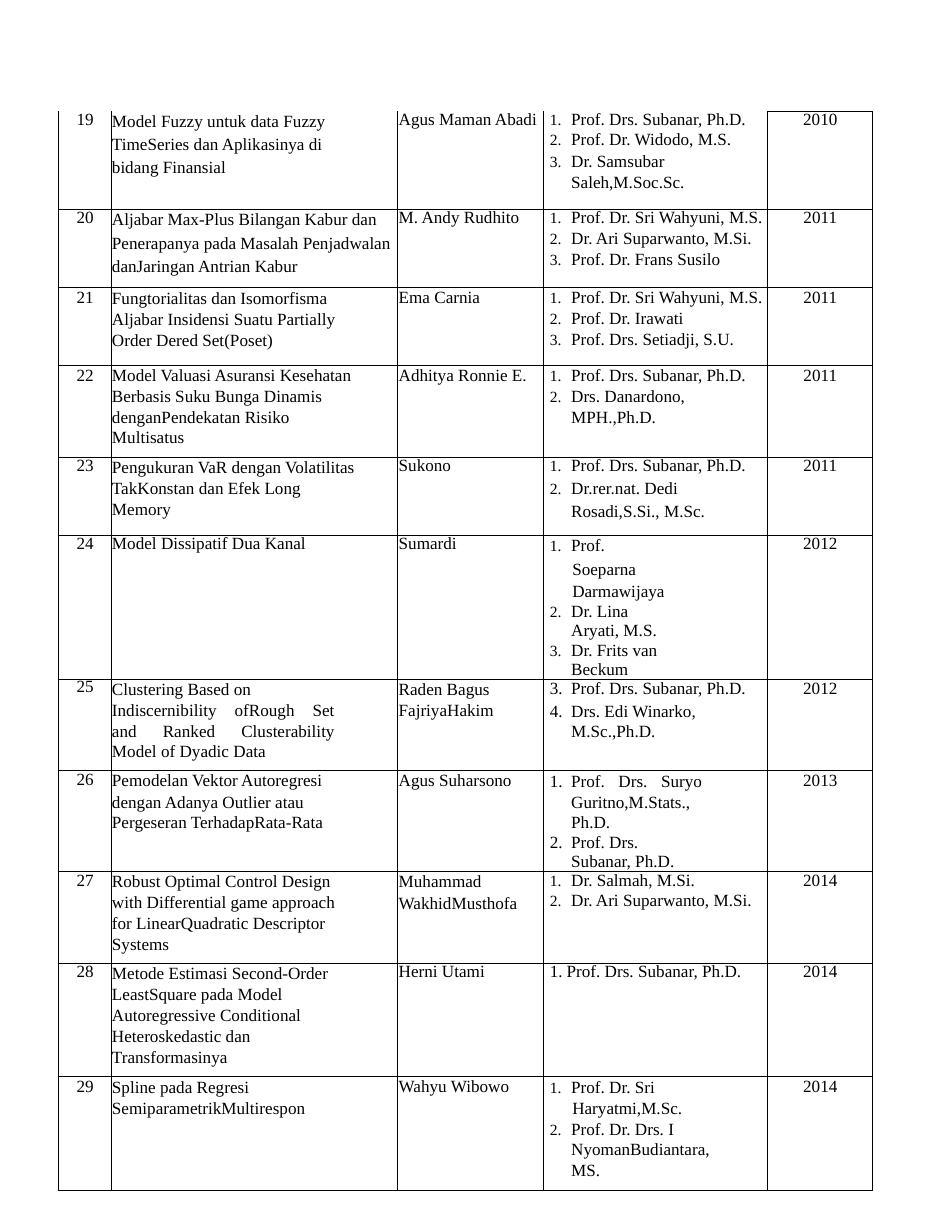
from dataclasses import dataclass

from lxml import etree
from pptx import Presentation
from pptx.dml.color import RGBColor
from pptx.enum.text import PP_ALIGN
from pptx.oxml.ns import qn
from pptx.util import Inches, Pt

LEFT, CENTER, JUSTIFY = PP_ALIGN.LEFT, PP_ALIGN.CENTER, PP_ALIGN.JUSTIFY


@dataclass(frozen=True)
class Theme:
    font: str = "Times New Roman"
    text_size: float = 11
    ink: str = "000000"
    border_width: float = 0.5


@dataclass(frozen=True)
class Line:
    """One paragraph; leading is points above 2, a multiple below."""
    text: str
    leading: float | None = None
    before: float = 0
    right: float = 0
    align: PP_ALIGN = LEFT
    left: float = 0.01
    hanging: float = 0
    start: int = 0
    number_size: int = 100


@dataclass(frozen=True)
class Thesis:
    number: int
    height: float
    leading: float
    title: list[Line]
    author: list[Line]
    supervisors: list[Line]
    year: Line


THEME = Theme()
COLUMN_WIDTHS = [0.47, 2.56, 1.3, 2.0, 0.94]
BORDER_SIDES = ["lnL", "lnR", "lnT", "lnB"]
TITLE_RIGHT = 0.5


def wrapped(text: str, leading: float | None = 1.1, before: float = 0) -> Line:
    return Line(text, leading, before, TITLE_RIGHT)


def item(text: str, leading: float | None = None, before: float = 0, right: float = 0,
         start: int = 1, size: int = 91, align: PP_ALIGN = LEFT,
         left: float = 0.25, hanging: float = 0.19) -> Line:
    return Line(text, leading, before, right, align, left, hanging, start, size)


def year(text: str, leading: float | None = None, before: float = 0) -> Line:
    return Line(text, leading, before, align=CENTER)


THESES = [
    Thesis(19, 0.88, 11.6,
           [Line("Model Fuzzy untuk data Fuzzy", 12.8),
            wrapped("TimeSeries dan Aplikasinya di bidang Finansial", 14.6, 0.7)],
           [Line("Agus Maman Abadi", 11.6)],
           [item("Prof. Drs. Subanar, Ph.D.", 11.6),
            item("Prof. Dr. Widodo, M.S.", before=1.1),
            item("Dr. Samsubar Saleh,M.Soc.Sc.", 1.1, 0.4, 0.5)],
           year("2010", 11.6)),
    Thesis(20, 0.7, 11.4,
           [Line("Aljabar Max-Plus Bilangan Kabur dan", 12.8),
            Line("Penerapanya pada Masalah Penjadwalan danJaringan Antrian Kabur", 14.6, 0.7)],
           [Line("M. Andy Rudhito", 11.4)],
           [item("Prof. Dr. Sri Wahyuni, M.S.", 11.4),
            item("Dr. Ari Suparwanto, M.Si.", before=1.2),
            item("Prof. Dr. Frans Susilo", before=1.1)],
           year("2011", 11.4)),
    Thesis(21, 0.69, 12.7,
           [Line("Fungtorialitas dan Isomorfisma", 12.9),
            wrapped("Aljabar Insidensi Suatu Partially Order Dered Set(Poset)")],
           [Line("Ema Carnia", 12.7)],
           [item("Prof. Dr. Sri Wahyuni, M.S.", 12.7),
            item("Prof. Dr. Irawati", before=1.1),
            item("Prof. Drs. Setiadji, S.U.", before=1.1)],
           year("2011", 12.7)),
    Thesis(22, 0.82, 12.8,
           [Line("Model Valuasi Asuransi Kesehatan", 13),
            wrapped("Berbasis Suku Bunga Dinamis denganPendekatan Risiko Multisatus", 1.09, 0.1)],
           [Line("Adhitya Ronnie E.", 12.8)],
           [item("Prof. Drs. Subanar, Ph.D.", 12.8),
            item("Drs. Danardono, MPH.,Ph.D.", 1.1, 0.1, 0.5)],
           year("2011", 12.8)),
    Thesis(23, 0.7, 11.6,
           [Line("Pengukuran VaR dengan Volatilitas", 12.9),
            wrapped("TakKonstan dan Efek Long Memory")],
           [Line("Sukono", 11.6)],
           [item("Prof. Drs. Subanar, Ph.D.", 11.6),
            item("Dr.rer.nat. Dedi Rosadi,S.Si., M.Sc.", 14.6, 0.5, 0.5)],
           year("2011", 11.6)),
    Thesis(24, 0.97, 11.4,
           [Line("Model Dissipatif Dua Kanal", 11.4)],
           [Line("Sumardi", 11.4)],
           [item("Prof.", 12.9, right=0.9),
            Line("Soeparna Darmawijaya", 14.6, 0.6, 0.9, left=0.26),
            item("Dr. Lina Aryati, M.S.", 12.5, right=0.9, start=2),
            item("Dr. Frits van Beckum", before=0.1, right=0.9, start=2)],
           year("2012", 11.4)),
    Thesis(25, 0.82, 11.4,
           [Line("Clustering Based on", 12.8, align=JUSTIFY),
            Line("Indiscernibility ofRough Set and Ranked Clusterability Model of Dyadic Data",
                 1.09, 0.3, 0.56, JUSTIFY)],
           [Line("Raden Bagus", 12.8), Line("FajriyaHakim", before=1.6)],
           [item("Prof. Drs. Subanar, Ph.D.", before=0.1, start=3, size=100),
            item("Drs. Edi Winarko, M.Sc.,Ph.D.", 13.1, 1.7, 0.5, 3, 100)],
           year("2012", before=0.9)),
    Thesis(26, 0.79, 11.6,
           [Line("Pemodelan Vektor Autoregresi", 12.8),
            wrapped("dengan Adanya Outlier atau Pergeseran TerhadapRata-Rata", 1.1, 0.1)],
           [Line("Agus Suharsono", before=0.8)],
           [item("Prof. Drs. Suryo Guritno,M.Stats., Ph.D.", 13.2, 0.1, 0.58,
                 size=100, align=JUSTIFY),
            item("Prof. Drs. Subanar, Ph.D.", before=0.7, right=0.75, size=100)],
           year("2013", before=0.8)),
    Thesis(27, 0.82, 11.7,
           [Line("Robust Optimal Control Design", 12.9),
            wrapped("with Differential game approach for LinearQuadratic Descriptor Systems")],
           [Line("Muhammad", 12.9), Line("WakhidMusthofa", before=1.3)],
           [item("Dr. Salmah, M.Si.", 11.7),
            item("Dr. Ari Suparwanto, M.Si.", before=0.8)],
           year("2014", 11.7)),
    Thesis(28, 1.01, 11.6,
           [Line("Metode Estimasi Second-Order", 12.8),
            wrapped("LeastSquare pada Model Autoregressive Conditional "
                    "Heteroskedastic dan Transformasinya", 1.1, 0.1)],
           [Line("Herni Utami", 11.6)],
           [item("Prof. Drs. Subanar, Ph.D.", 11.6, size=100, left=0.21, hanging=0.15)],
           year("2014", 11.6)),
    Thesis(29, 1.02, 12.8,
           [Line("Spline pada Regresi", 13), Line("SemiparametrikMultirespon", before=1.3)],
           [Line("Wahyu Wibowo", 12.8)],
           [item("Prof. Dr. Sri", 13),
            Line("Haryatmi,M.Sc.", before=1.4, left=0.26),
            item("Prof. Dr. Drs. I NyomanBudiantara, MS.", 1.09, 0.2, 0.5, 2)],
           year("2014", 12.8)),
]


def format_paragraph(para, line: Line) -> None:
    para.alignment = line.align
    para.space_before = Pt(line.before)
    if line.leading:
        para.line_spacing = Pt(line.leading) if line.leading > 2 else line.leading
    for span in para.runs:
        span.font.name = THEME.font
        span.font.size = Pt(THEME.text_size)
        span.font.color.rgb = RGBColor.from_string(THEME.ink)
    # Indents and automatic numbers
    properties = para._p.get_or_add_pPr()
    properties.set("marL", str(Inches(line.left)))
    properties.set("marR", str(Inches(line.right)))
    properties.set("indent", str(-Inches(line.hanging)))
    if line.start:
        etree.SubElement(properties, qn("a:buSzPct"), val=str(line.number_size * 1000))
        number = etree.SubElement(properties, qn("a:buAutoNum"), type="arabicPeriod")
        if line.start > 1:
            number.set("startAt", str(line.start))


def set_borders(cell, open_top: bool) -> None:
    properties = cell._tc.get_or_add_tcPr()
    for position, side in enumerate(BORDER_SIDES):
        border = etree.Element(qn(f"a:{side}"), w=str(Pt(THEME.border_width)))
        if open_top and side == "lnT":
            etree.SubElement(border, qn("a:noFill"))
        else:
            fill = etree.SubElement(border, qn("a:solidFill"))
            etree.SubElement(fill, qn("a:srgbClr"), val=THEME.ink)
        properties.insert(position, border)


def fill_cell(cell, lines: list[Line], open_top: bool) -> None:
    cell.margin_left = cell.margin_right = cell.margin_top = cell.margin_bottom = 0
    cell.fill.background()
    set_borders(cell, open_top)
    cell.text_frame.text = "\n".join(line.text for line in lines)
    for para, line in zip(cell.text_frame.paragraphs, lines):
        format_paragraph(para, line)


def add_thesis_table(page) -> None:
    frame = page.shapes.add_table(
        len(THESES), len(COLUMN_WIDTHS), Inches(0.52), Inches(0.99),
        Inches(sum(COLUMN_WIDTHS)), Inches(sum(thesis.height for thesis in THESES)))
    table = frame.table
    table.first_row = table.horz_banding = False
    for column, width in zip(table.columns, COLUMN_WIDTHS):
        column.width = Inches(width)
    for index, thesis in enumerate(THESES):
        row = table.rows[index]
        row.height = Inches(thesis.height)
        number = Line(str(thesis.number), thesis.leading, align=CENTER)
        contents = [[number], thesis.title, thesis.author, thesis.supervisors, [thesis.year]]
        for column_index, (cell, lines) in enumerate(zip(row.cells, contents)):
            # The first row continues a table, so only its year is closed on top
            fill_cell(cell, lines, index == 0 and column_index < len(contents) - 1)


def main() -> None:
    deck = Presentation()
    deck.slide_width, deck.slide_height = Inches(8.5), Inches(11)
    page = deck.slides.add_slide(deck.slide_layouts[6])
    add_thesis_table(page)
    deck.save("out.pptx")


if __name__ == "__main__":
    main()
